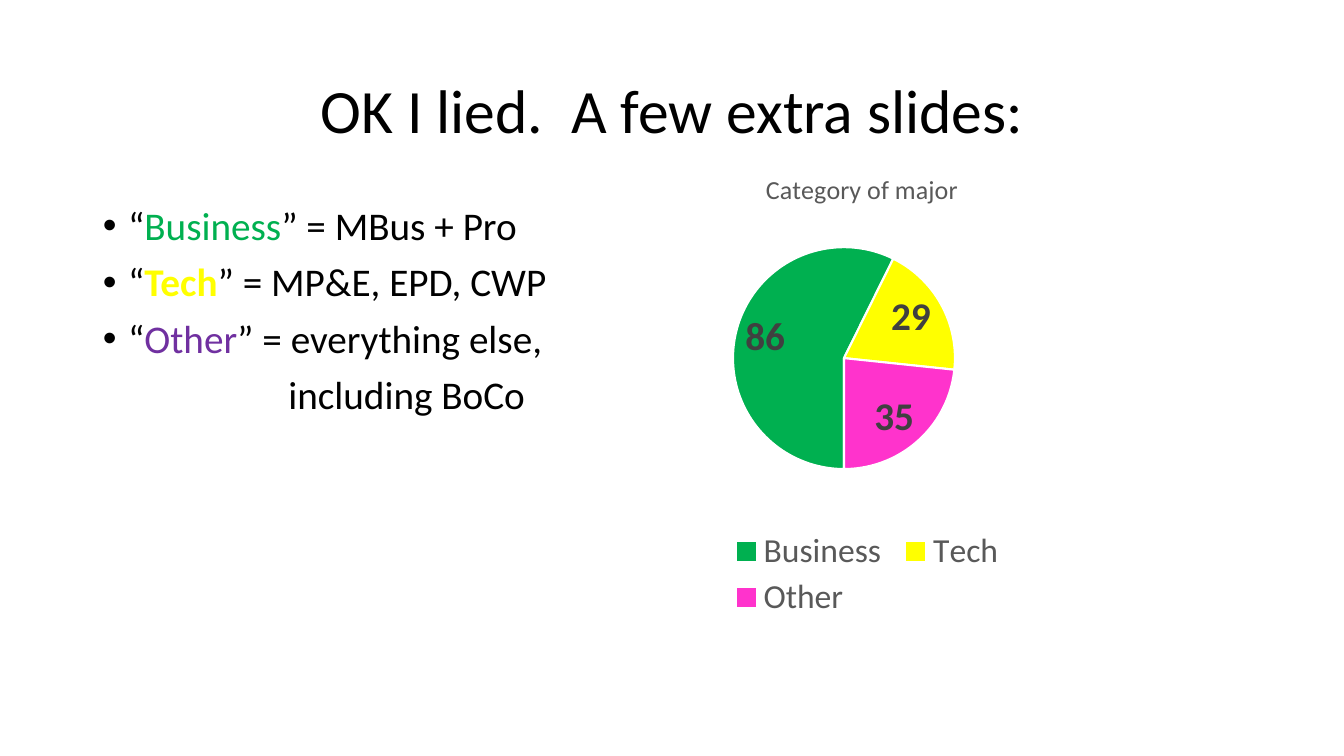
from pptx import Presentation
from pptx.chart.data import CategoryChartData
from pptx.dml.color import RGBColor
from pptx.enum.chart import XL_CHART_TYPE, XL_LABEL_POSITION, XL_LEGEND_POSITION
from pptx.enum.text import MSO_ANCHOR, MSO_AUTO_SIZE, PP_ALIGN
from pptx.oxml import parse_xml
from pptx.oxml.ns import nsdecls, qn
from pptx.util import Inches, Pt

PIE = XL_CHART_TYPE.PIE
BEST_FIT = XL_LABEL_POSITION.BEST_FIT
BOTTOM = XL_LEGEND_POSITION.BOTTOM
MIDDLE, TOP = MSO_ANCHOR.MIDDLE, MSO_ANCHOR.TOP
CENTER = PP_ALIGN.CENTER
NO_FIT = MSO_AUTO_SIZE.NONE

FONT = "Calibri"
BLACK, GREY, DARK = "000000", "595959", "404040"
GREEN, YELLOW, PURPLE, PINK = "00B050", "FFFF00", "7030A0", "FF33CC"

MAJORS = [("Business", 86, GREEN), ("Tech", 29, YELLOW), ("Other", 35, PINK)]
DEFINITIONS = [
    ("Business", GREEN, False, "” = MBus + Pro"),
    ("Tech", YELLOW, True, "” = MP&E, EPD, CWP"),
    ("Other", PURPLE, False, "” = everything else,"),
]


def rgb(value):
    return RGBColor.from_string(value)


def style(font, size, color, bold=False):
    font.name, font.size, font.bold = FONT, Pt(size), bold
    font.color.rgb = rgb(color)


def add_run(p, text, size, color=BLACK, bold=False):
    r = p.add_run()
    r.text = text
    style(r.font, size, color, bold)


def place(sp, box, anchor):
    sp.left, sp.top, sp.width, sp.height = (Inches(v) for v in box)
    tf = sp.text_frame
    tf.word_wrap = True
    tf.auto_size = NO_FIT
    tf.vertical_anchor = anchor
    return tf


def format_item(p, margin, indent, bullet, before):
    p.line_spacing = 0.9
    p.space_before = Pt(before)
    pPr = p._p.get_or_add_pPr()
    pPr.set("marL", str(Inches(margin)))
    pPr.set("indent", str(Inches(indent)))
    mark = '<a:buChar %s char="•"/>' if bullet else "<a:buNone %s/>"
    pPr.append(parse_xml(mark % nsdecls("a")))


def manual_layout(x, y, w, h, inner=False):
    target = '<c:layoutTarget val="inner"/>' if inner else ""
    sizes = "".join(f'<c:{k} val="{v}"/>' for k, v in zip("xywh", (x, y, w, h)))
    return parse_xml(
        f'<c:layout {nsdecls("c")}><c:manualLayout>{target}<c:xMode val="edge"/>'
        f'<c:yMode val="edge"/>{sizes}</c:manualLayout></c:layout>')


def drop(parent, tag):
    for child in parent.findall(qn(tag)):
        parent.remove(child)


def build_title(s, box):
    p = place(s.shapes.title, box, MIDDLE).paragraphs[0]
    p.alignment = CENTER
    p.line_spacing = 0.9
    add_run(p, "OK I lied.  A few extra slides:", 44)


def build_definitions(s, box):
    tf = place(s.placeholders[1], box, TOP)
    for i, (name, color, bold, meaning) in enumerate(DEFINITIONS):
        p = tf.add_paragraph() if i else tf.paragraphs[0]
        format_item(p, 0.25, -0.25, True, 10 if i else 0)
        add_run(p, "“", 28)
        add_run(p, name, 28, color, bold)
        add_run(p, meaning, 28)
    # Continuation of the last definition
    p = tf.add_paragraph()
    format_item(p, 1.84, 0, False, 10)
    add_run(p, "including BoCo", 28)


def build_pie(s, box):
    data = CategoryChartData()
    data.categories = [name for name, _, _ in MAJORS]
    data.add_series("Category of major", [count for _, count, _ in MAJORS])
    chart = s.shapes.add_chart(PIE, *(Inches(v) for v in box), data).chart
    style(chart.font, 10, BLACK)

    # Chart title
    chart.has_title = True
    p = chart.chart_title.text_frame.paragraphs[0]
    add_run(p, "Category of major", 18.6, GREY)
    chart.chart_title.include_in_layout = False

    # Slices and their values
    plot = chart.plots[0]
    plot.vary_by_categories = True
    series = plot.series[0]
    for i, (_, _, color) in enumerate(MAJORS):
        fmt = series.points[i].format
        fmt.fill.solid()
        fmt.fill.fore_color.rgb = rgb(color)
        fmt.line.color.rgb = rgb("FFFFFF")
        fmt.line.width = Pt(1.5)
    labels = series.data_labels
    labels.show_value = True
    labels.position = BEST_FIT
    style(labels.font, 28, DARK, True)

    # Legend
    chart.has_legend = True
    legend = chart.legend
    legend.position = BOTTOM
    legend.include_in_layout = False
    style(legend.font, 24, GREY)
    drop(legend._element, "c:layout")
    legend._element.find(qn("c:legendPos")).addnext(
        manual_layout(0.23, 0.79, 0.56, 0.2))

    # Pie position and rotation
    area = chart._chartSpace.chart.plotArea
    drop(area, "c:layout")
    area.insert(0, manual_layout(0.25, 0.2, 0.43, 0.47, inner=True))
    pie = area.find(qn("c:pieChart"))
    drop(pie, "c:firstSliceAng")
    pie.append(parse_xml(f'<c:firstSliceAng {nsdecls("c")} val="180"/>'))


def main():
    prs = Presentation()
    prs.slide_width, prs.slide_height = Inches(13.33), Inches(7.5)
    s = prs.slides.add_slide(prs.slide_layouts[1])
    build_title(s, (0.92, 0.4, 11.5, 1.45))
    build_definitions(s, (0.92, 2, 11.5, 4.76))
    build_pie(s, (5.99, 1.5, 5.12, 4.72))
    prs.save("out.pptx")


if __name__ == "__main__":
    main()
